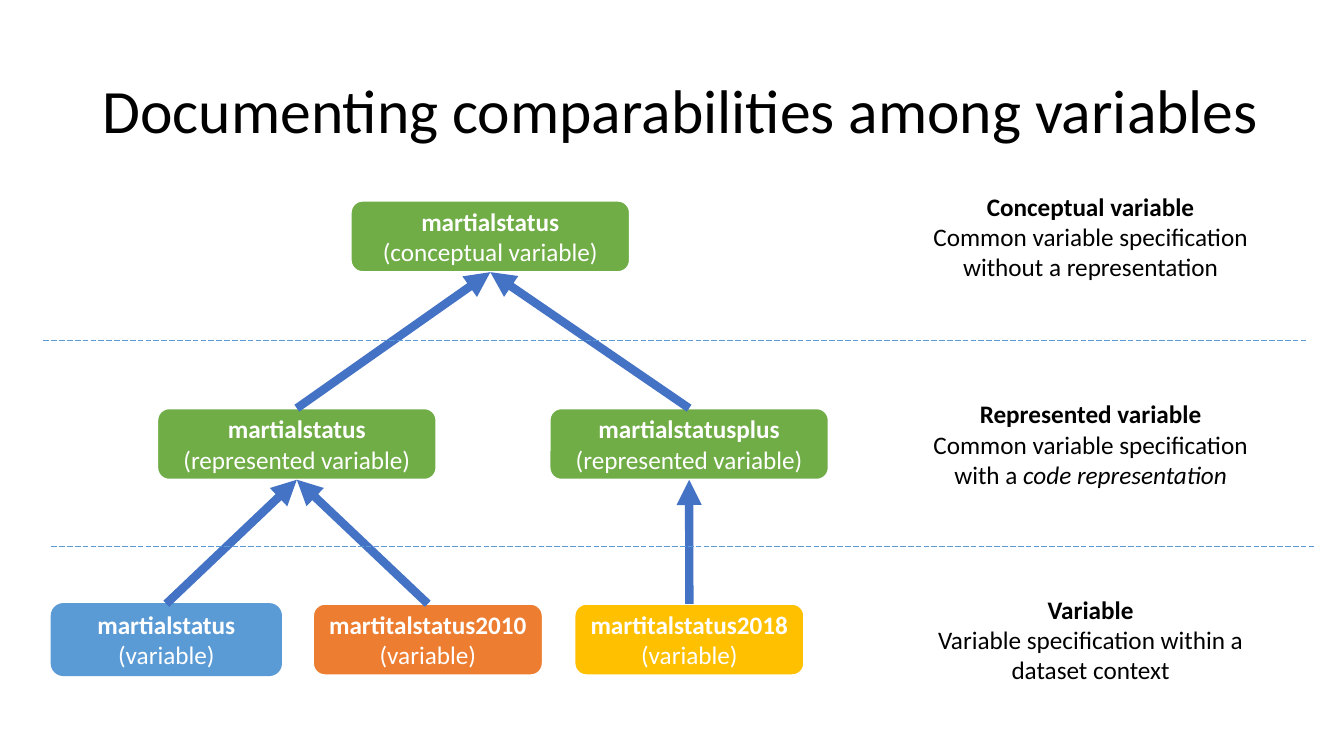
from dataclasses import dataclass

from lxml import etree
from pptx import Presentation
from pptx import util as u
from pptx.dml.color import RGBColor
from pptx.enum import dml, shapes, text
from pptx.oxml.ns import qn

COLORS = {
    "black": "000000", "white": "FFFFFF", "green": "70AD47", "blue": "5B9BD5",
    "orange": "ED7D31", "yellow": "FFC000", "arrow": "4472C4",
}
FRAME_FORMAT = {"word_wrap": True, "vertical_anchor": text.MSO_ANCHOR.MIDDLE}
BODY_FORMAT = {"name": "Calibri", "size": u.Pt(18)}
TITLE_FORMAT = {"name": "Calibri", "size": u.Pt(44)}
BOLD, PLAIN, ITALIC = {"bold": True}, {"bold": False}, {"bold": False, "italic": True}

# Row tops and shared sizes, in points
CONCEPTUAL_TOP, REPRESENTED_TOP, VARIABLE_TOP = 143.3, 291.6, 431.3
WIDE, NARROW, BOX_HEIGHT = 199.5, 164.2, 51.1
CAPTION_LEFT, CAPTION_WIDTH, CAPTION_HEIGHT = 654.5, 249.1, 87.1
DIVIDER_WIDTH = 902.9


@dataclass
class VariableBox:
    name: str
    kind: str
    left: float
    top: float
    width: float
    fill: str
    outline: str = "white"
    outline_width: float = 1.5
    parent: str = ""


@dataclass
class Caption:
    heading: str
    detail: str
    row_top: float
    emphasis: str = ""


@dataclass
class Divider:
    left: float
    top: float


BOXES = {
    "conceptual": VariableBox("martialstatus", "(conceptual variable)", 250.5, CONCEPTUAL_TOP, WIDE, "green"),
    "status": VariableBox("martialstatus", "(represented variable)", 112.3, REPRESENTED_TOP, WIDE, "green",
                          parent="conceptual"),
    "statusplus": VariableBox("martialstatusplus", "(represented variable)", 392.5, REPRESENTED_TOP, WIDE, "green",
                              parent="conceptual"),
    "base": VariableBox("martialstatus", "(variable)", 36.7, VARIABLE_TOP, NARROW, "blue", "blue", 1, "status"),
    "2010": VariableBox("martitalstatus2010", "(variable)", 223.5, VARIABLE_TOP, NARROW, "orange", parent="status"),
    "2018": VariableBox("martitalstatus2018", "(variable)", 410.3, VARIABLE_TOP, NARROW, "yellow",
                        parent="statusplus"),
}
CAPTIONS = [
    Caption("Conceptual variable", "Common variable specification without a representation", CONCEPTUAL_TOP),
    Caption("Represented variable", "Common variable specification with a ", REPRESENTED_TOP, "code representation"),
    Caption("Variable", "Variable specification within a dataset context", VARIABLE_TOP),
]
DIVIDERS = [Divider(31, 243.4), Divider(36.7, 390.2)]


def rgb(color: str) -> RGBColor:
    return RGBColor.from_string(COLORS[color])


def apply(target, values: dict) -> None:
    for attribute, value in values.items():
        setattr(target, attribute, value)


def add_run(paragraph, words: str, color: str, values: dict) -> None:
    run = paragraph.add_run()
    run.text = words
    apply(run.font, values)
    run.font.color.rgb = rgb(color)


def write_label(frame, heading: str, detail: str, color: str, emphasis: str = "") -> None:
    apply(frame, FRAME_FORMAT)
    label = frame.paragraphs[0]
    label.alignment = text.PP_ALIGN.CENTER
    add_run(label, heading, color, BODY_FORMAT | BOLD)
    label.add_line_break()
    add_run(label, detail, color, BODY_FORMAT | PLAIN)
    if emphasis:
        add_run(label, emphasis, color, BODY_FORMAT | ITALIC)


def add_title(slide, words: str) -> None:
    title = slide.shapes.add_textbox(u.Pt(66.2), u.Pt(28.8), u.Pt(853.2), u.Pt(104.4))
    apply(title.text_frame, FRAME_FORMAT)
    heading = title.text_frame.paragraphs[0]
    heading.line_spacing = 0.9
    add_run(heading, words, "black", TITLE_FORMAT)


def add_box(slide, box: VariableBox):
    rectangle = slide.shapes.add_shape(
        shapes.MSO_SHAPE.ROUNDED_RECTANGLE,
        u.Pt(box.left), u.Pt(box.top), u.Pt(box.width), u.Pt(BOX_HEIGHT))
    rectangle.shadow.inherit = False
    rectangle.fill.solid()
    rectangle.fill.fore_color.rgb = rgb(box.fill)
    rectangle.line.color.rgb = rgb(box.outline)
    rectangle.line.width = u.Pt(box.outline_width)
    write_label(rectangle.text_frame, box.name, box.kind, "white")
    return rectangle


def add_line(slide, left: float, top: float, right: float, color: str, width: float):
    line = slide.shapes.add_connector(
        shapes.MSO_CONNECTOR.STRAIGHT, u.Pt(left), u.Pt(top), u.Pt(right), u.Pt(top))
    line.line.color.rgb = rgb(color)
    line.line.width = u.Pt(width)
    etree.SubElement(line.line._get_or_add_ln().getparent(), qn("a:effectLst"))
    return line


def add_arrow(slide, child, parent) -> None:
    arrow = add_line(slide, 0, 0, 0, "arrow", 6)
    arrow.begin_connect(child, 0)
    arrow.end_connect(parent, 2)
    etree.SubElement(arrow.line._get_or_add_ln(), qn("a:tailEnd"), type="triangle")


def add_divider(slide, divider: Divider) -> None:
    line = add_line(slide, divider.left, divider.top, divider.left + DIVIDER_WIDTH, "blue", 0.5)
    line.line.dash_style = dml.MSO_LINE.LONG_DASH


def add_caption(slide, caption: Caption) -> None:
    top = caption.row_top + (BOX_HEIGHT - CAPTION_HEIGHT) / 2
    note = slide.shapes.add_textbox(
        u.Pt(CAPTION_LEFT), u.Pt(top), u.Pt(CAPTION_WIDTH), u.Pt(CAPTION_HEIGHT))
    write_label(note.text_frame, caption.heading, caption.detail, "black", caption.emphasis)


def main() -> None:
    deck = Presentation()
    deck.slide_width, deck.slide_height = u.Pt(960), u.Pt(540)
    slide = deck.slides.add_slide(deck.slide_layouts[6])
    add_title(slide, "Documenting comparabilities among variables")

    # Variable tree
    drawn = {key: add_box(slide, box) for key, box in BOXES.items()}
    for key, box in BOXES.items():
        if box.parent:
            add_arrow(slide, drawn[key], drawn[box.parent])

    # Level separators and explanations
    for divider in DIVIDERS:
        add_divider(slide, divider)
    for caption in CAPTIONS:
        add_caption(slide, caption)
    deck.save("out.pptx")


if __name__ == "__main__":
    main()
